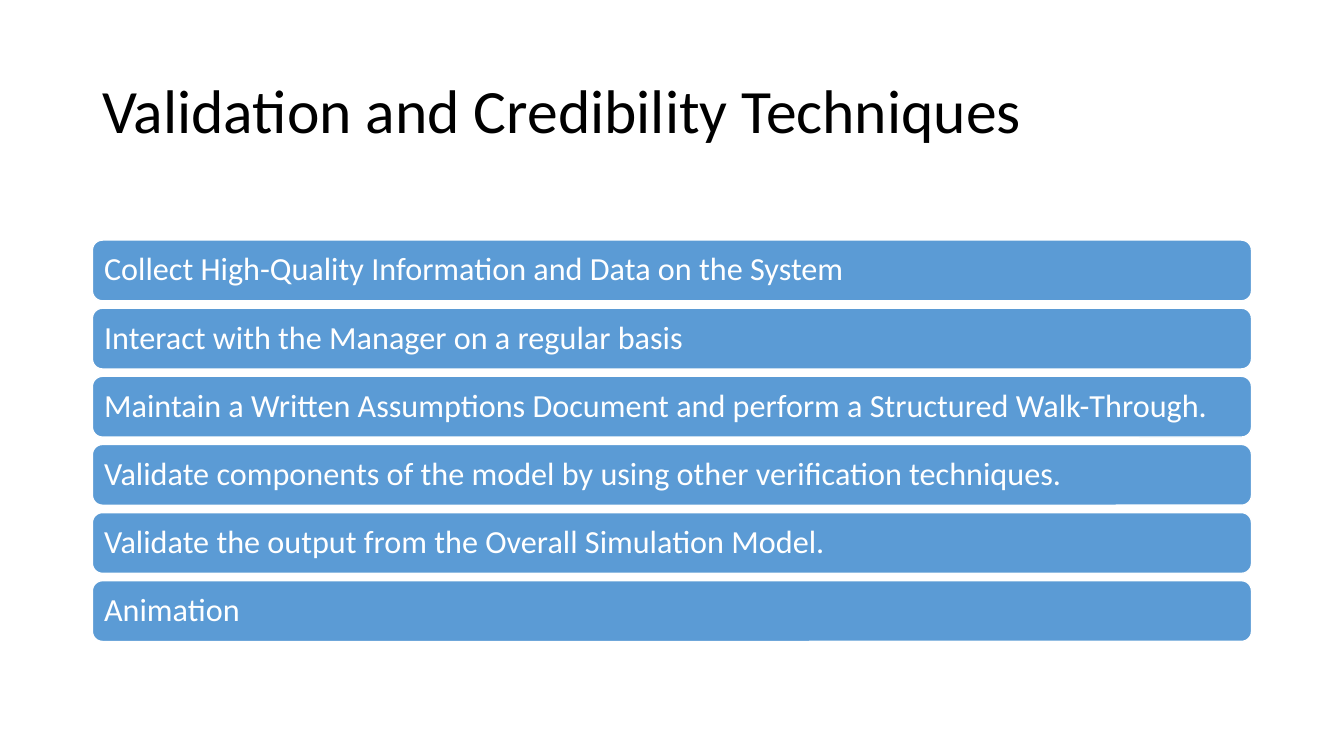
import pptx
import pptx.util
import pptx.dml.color
import pptx.enum.shapes
import pptx.enum.text
from dataclasses import dataclass

Pt = pptx.util.Pt
RGB = pptx.dml.color.RGBColor


@dataclass(frozen=True)
class Theme:
    font: str = "Calibri"
    ink: RGB = RGB(0, 0, 0)
    paper: RGB = RGB(255, 255, 255)
    blue: RGB = RGB(0x5B, 0x9B, 0xD5)
    head: float = 44
    body: float = 23


THEME = Theme()
LEFT, WIDTH = 66, 828
BAR_TOP, BAR_HIGH, BAR_GAP = 171.5, 43.44, 5.22

STEPS = [
    "Collect High-Quality Information and Data on the System",
    "Interact with the Manager on a regular basis",
    "Maintain a Written Assumptions Document and perform a Structured Walk-Through.",
    "Validate components of the model by using other verification techniques.",
    "Validate the output from the Overall Simulation Model.",
    "Animation",
]


def write(shape, text, size, color):
    """Set one left-aligned, vertically centred line of text."""
    frame = shape.text_frame
    frame.word_wrap = True
    frame.vertical_anchor = pptx.enum.text.MSO_ANCHOR.MIDDLE
    line = frame.paragraphs[0]
    line.text = text
    line.alignment = pptx.enum.text.PP_ALIGN.LEFT
    line.line_spacing = 0.9
    line.font.name = THEME.font
    line.font.size = Pt(size)
    line.font.color.rgb = color


def add_title(slide, text):
    box = slide.shapes.add_textbox(Pt(LEFT), Pt(28.75), Pt(WIDTH), Pt(104.4))
    write(box, text, THEME.head, THEME.ink)


def add_bar(slide, top, text):
    bar = slide.shapes.add_shape(
        pptx.enum.shapes.MSO_SHAPE.ROUNDED_RECTANGLE,
        Pt(LEFT), Pt(top), Pt(WIDTH), Pt(BAR_HIGH))
    bar.shadow.inherit = False
    bar.fill.solid()
    bar.fill.fore_color.rgb = THEME.blue
    bar.line.color.rgb = THEME.paper
    bar.line.width = Pt(1)
    bar.text_frame.margin_left = bar.text_frame.margin_right = Pt(6.3)
    write(bar, text, THEME.body, THEME.paper)


def main():
    deck = pptx.Presentation()
    deck.slide_width, deck.slide_height = Pt(960), Pt(540)
    slide = deck.slides.add_slide(deck.slide_layouts[6])

    # Title
    add_title(slide, "Validation and Credibility Techniques")

    # Stack of technique bars
    for row, step in enumerate(STEPS):
        add_bar(slide, BAR_TOP + row * (BAR_HIGH + BAR_GAP), step)

    deck.save("out.pptx")


if __name__ == "__main__":
    main()
